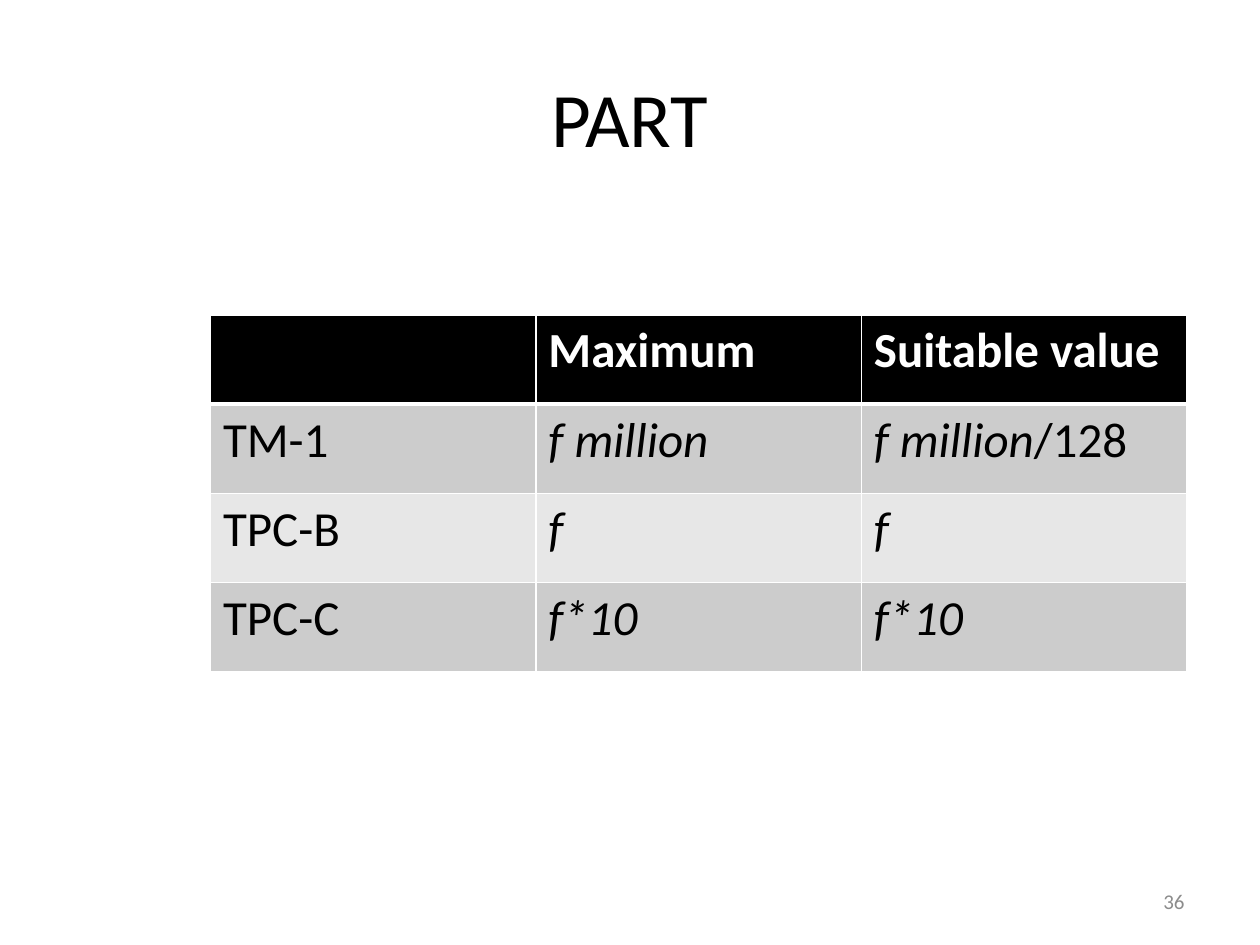
import pptx
import pptx.dml.color
import pptx.enum.text
import pptx.oxml
import pptx.oxml.ns
import pptx.util
from pptx.util import Inches

FONT = "Calibri"
BLACK, WHITE, GRAY = "000000", "FFFFFF", "8C8C8C"
BAND_FILLS = ["CCCCCC", "E7E7E7"]
ALIGN = pptx.enum.text.PP_ALIGN
MIDDLE = pptx.enum.text.MSO_ANCHOR.MIDDLE

# Each cell is a list of (text, italic) runs
TABLE_ROWS = [
    [[], [("Maximum", False)], [("Suitable value", False)]],
    [[("TM-1", False)], [("f million", True)], [("f million", True), ("/128", False)]],
    [[("TPC-B", False)], [("f", True)], [("f", True)]],
    [[("TPC-C", False)], [("f*10", True)], [("f*10", True)]],
]


def color(hex_value):
    return pptx.dml.color.RGBColor.from_string(hex_value)


def format_paragraph(paragraph, size, hex_value, alignment=ALIGN.LEFT, bold=False):
    paragraph.alignment = alignment
    font = paragraph.font
    font.name = FONT
    font.size = pptx.util.Pt(size)
    font.bold = bold
    font.color.rgb = color(hex_value)


def add_title(slide, text):
    title = slide.shapes.title
    title.left, title.top = Inches(0.5), Inches(0.3)
    title.width, title.height = Inches(9), Inches(1.25)
    title.text_frame.text = text
    title.text_frame.vertical_anchor = MIDDLE
    format_paragraph(title.text_frame.paragraphs[0], 44, BLACK, ALIGN.CENTER)


def add_slide_number(slide, text):
    box = slide.shapes.add_textbox(Inches(7.17), Inches(6.95), Inches(2.33), Inches(0.4))
    frame = box.text_frame
    frame.word_wrap = True
    frame.vertical_anchor = MIDDLE
    frame.text = text
    format_paragraph(frame.paragraphs[0], 12, GRAY, ALIGN.RIGHT)


def set_borders(cell, top, bottom):
    """Draw white cell borders; widths are in points."""
    properties = cell._tc.get_or_add_tcPr()
    for side, width in (("L", 1), ("R", 1), ("T", top), ("B", bottom)):
        properties.append(pptx.oxml.parse_xml(
            f'<a:ln{side} {pptx.oxml.ns.nsdecls("a")} w="{pptx.util.Pt(width)}">'
            f'<a:solidFill><a:srgbClr val="{WHITE}"/></a:solidFill></a:ln{side}>'))


def fill_cell(cell, runs, row_index):
    is_header = row_index == 0
    set_borders(cell, top=3 if row_index == 1 else 1, bottom=3 if is_header else 1)
    cell.fill.solid()
    cell.fill.fore_color.rgb = color(BLACK if is_header else BAND_FILLS[(row_index - 1) % 2])

    paragraph = cell.text_frame.paragraphs[0]
    format_paragraph(paragraph, 28, WHITE if is_header else BLACK, bold=is_header)
    for text, italic in runs:
        run = paragraph.add_run()
        run.text = text
        run.font.italic = italic


def add_value_table(slide, rows):
    frame = slide.shapes.add_table(len(rows), len(rows[0]), Inches(1.67), Inches(2.5),
                                   Inches(7.75), Inches(2.83))
    for row_index, row in enumerate(rows):
        for column_index, runs in enumerate(row):
            fill_cell(frame.table.cell(row_index, column_index), runs, row_index)


def main():
    presentation = pptx.Presentation()
    presentation.slide_width, presentation.slide_height = Inches(10), Inches(7.5)
    title_only_layout = presentation.slide_layouts[5]
    slide = presentation.slides.add_slide(title_only_layout)

    add_title(slide, "PART")
    add_slide_number(slide, "36")
    add_value_table(slide, TABLE_ROWS)

    presentation.save("out.pptx")


if __name__ == "__main__":
    main()
